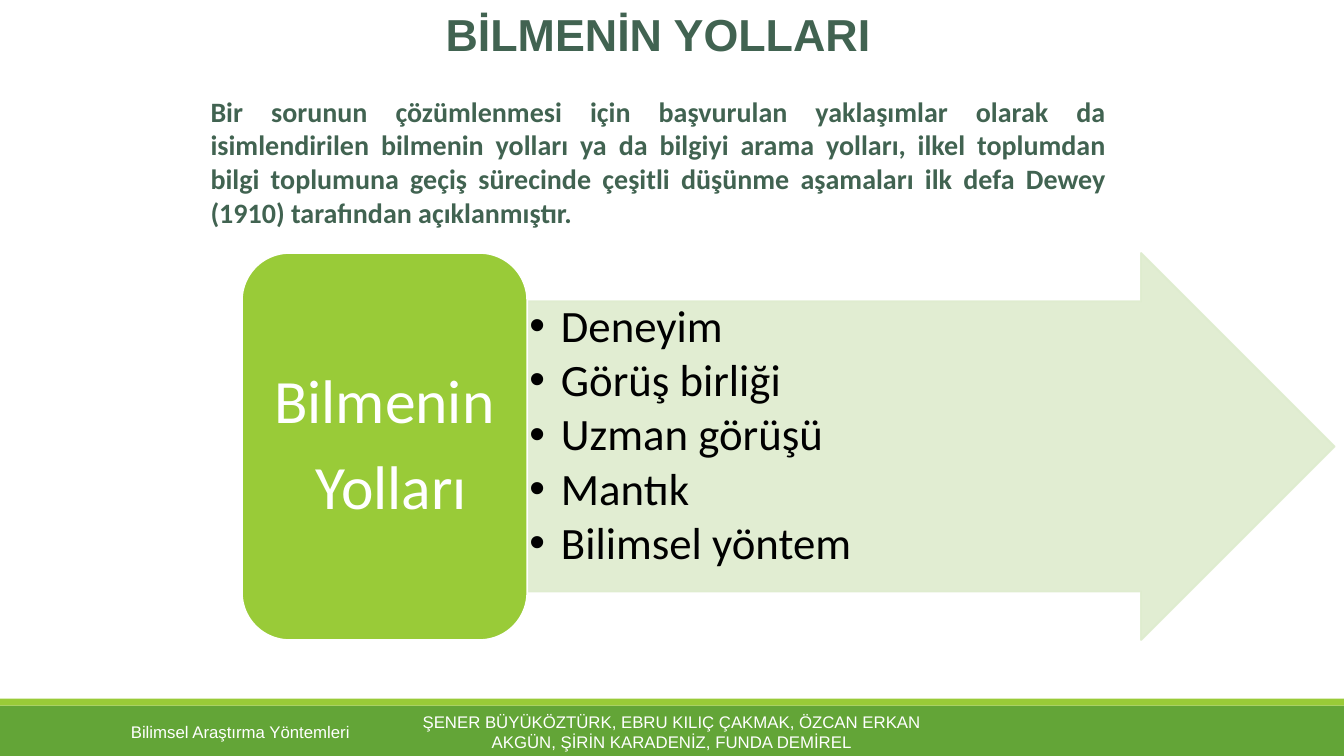
from lxml import etree
from pptx import Presentation
from pptx.dml.color import RGBColor
from pptx.enum.shapes import MSO_SHAPE as Shape
from pptx.enum.text import MSO_ANCHOR as Anchor, PP_ALIGN as Align
from pptx.oxml.ns import qn
from pptx.util import Pt

TITLE = "BİLMENİN YOLLARI"
INTRO = ("Bir sorunun çözümlenmesi için başvurulan yaklaşımlar olarak da "
         "isimlendirilen bilmenin yolları ya da bilgiyi arama yolları, ilkel "
         "toplumdan bilgi toplumuna geçiş sürecinde çeşitli düşünme aşamaları "
         "ilk defa Dewey (1910) tarafından açıklanmıştır.")
TOPIC = ["Bilmenin", " Yolları"]
WAYS = ["Deneyim", "Görüş birliği", "Uzman görüşü", "Mantık", "Bilimsel yöntem"]
COURSE = "Bilimsel Araştırma Yöntemleri"
AUTHORS = ("ŞENER BÜYÜKÖZTÜRK, EBRU KILIÇ ÇAKMAK, ÖZCAN ERKAN AKGÜN, "
           "ŞİRİN KARADENİZ, FUNDA DEMİREL")

GREEN, LIME, PALE = "63A537", "99CB38", "DEECCE"
DARK, WHITE, BLACK = "416351", "FFFFFF", "000000"
WIDE, HIGH = 960, 540
FOOT, STRIPE = 36, 5
TOP, TALL = 180.7, 276.5
LEFT, SPLIT, RIGHT = 172.8, 376.6, 953.3

deck = Presentation()
deck.slide_width, deck.slide_height = Pt(WIDE), Pt(HIGH)
slide = deck.slides.add_slide(deck.slide_layouts[6])


def paint(target, color, alpha=100):
    target.solid()
    target.fore_color.rgb = RGBColor.from_string(color)
    if alpha < 100:
        for node in target._xPr.iter(qn("a:srgbClr")):
            etree.SubElement(node, qn("a:alpha")).set("val", str(alpha * 1000))


def block(kind, x, y, w, h, color, edge=None, alpha=100):
    item = slide.shapes.add_shape(kind, Pt(x), Pt(y), Pt(w), Pt(h))
    item.shadow.inherit = False
    paint(item.fill, color, alpha)
    if edge:
        item.line.width = Pt(1.25)
        paint(item.line.fill, edge, alpha)
    else:
        item.line.fill.background()
    return item


def box(x, y, w, h, anchor=Anchor.MIDDLE, pad=(7.2, 3.6)):
    frame = slide.shapes.add_textbox(Pt(x), Pt(y), Pt(w), Pt(h)).text_frame
    frame.word_wrap = True
    frame.vertical_anchor = anchor
    frame.margin_left = frame.margin_right = Pt(pad[0])
    frame.margin_top = frame.margin_bottom = Pt(pad[1])
    return frame


def write(frame, text, size=12, font="Arial", color=WHITE, bold=False,
          align=Align.LEFT, line=1.0, after=0, indent=0):
    """Add a paragraph; an indent gives it a hanging bullet."""
    para = frame.paragraphs[0]
    if para.runs:
        para = frame.add_paragraph()
    para.alignment, para.line_spacing, para.space_after = align, line, Pt(after)
    run = para.add_run()
    run.text = text
    run.font.size, run.font.name, run.font.bold = Pt(size), font, bold
    run.font.color.rgb = RGBColor.from_string(color)
    if indent:
        props = para._p.get_or_add_pPr()
        props.set("marL", str(Pt(indent)))
        props.set("indent", str(-Pt(indent)))
        etree.SubElement(props, qn("a:buFont")).set("typeface", "Arial")
        etree.SubElement(props, qn("a:buChar")).set("char", "•")


# Footer
block(Shape.RECTANGLE, 0, HIGH - FOOT, WIDE, FOOT, GREEN)
block(Shape.RECTANGLE, 0, HIGH - FOOT - STRIPE, WIDE, STRIPE, LIME)
write(box(86.4, 508.3, 194.4, 28.8), COURSE)
write(box(290.2, 508.3, 379.4, 28.8), AUTHORS, align=Align.CENTER)

# Arrow with the list of ways
arrow = block(Shape.RIGHT_ARROW, SPLIT, TOP, RIGHT - SPLIT, TALL, PALE, PALE, 90)
arrow.adjustments[0], arrow.adjustments[1] = 0.75, 0.5
ways = box(SPLIT, TOP + TALL / 8, 473, TALL * 0.75, Anchor.TOP, (1.6, 1.6))
for way in WAYS:
    write(ways, way, 32, "Calibri", BLACK, line=0.9, after=4.2, indent=22.5)

# Topic card
block(Shape.ROUNDED_RECTANGLE, LEFT, TOP, SPLIT - LEFT, TALL, LIME, WHITE)
topic = box(LEFT + 9.7, TOP + 9.7, SPLIT - LEFT - 19.4, TALL - 19.4, pad=(13, 6.6))
for word in TOPIC:
    write(topic, word, 44, "Calibri", align=Align.CENTER, line=0.9, after=14.6)

# Heading and introduction
head = box(143.3, 1.4, 653.8, 206, Anchor.TOP)
write(head, TITLE, 32, color=DARK, bold=True, align=Align.CENTER, after=24)
write(head, INTRO, 20, "Calibri", DARK, True, Align.JUSTIFY)

deck.save("out.pptx")
